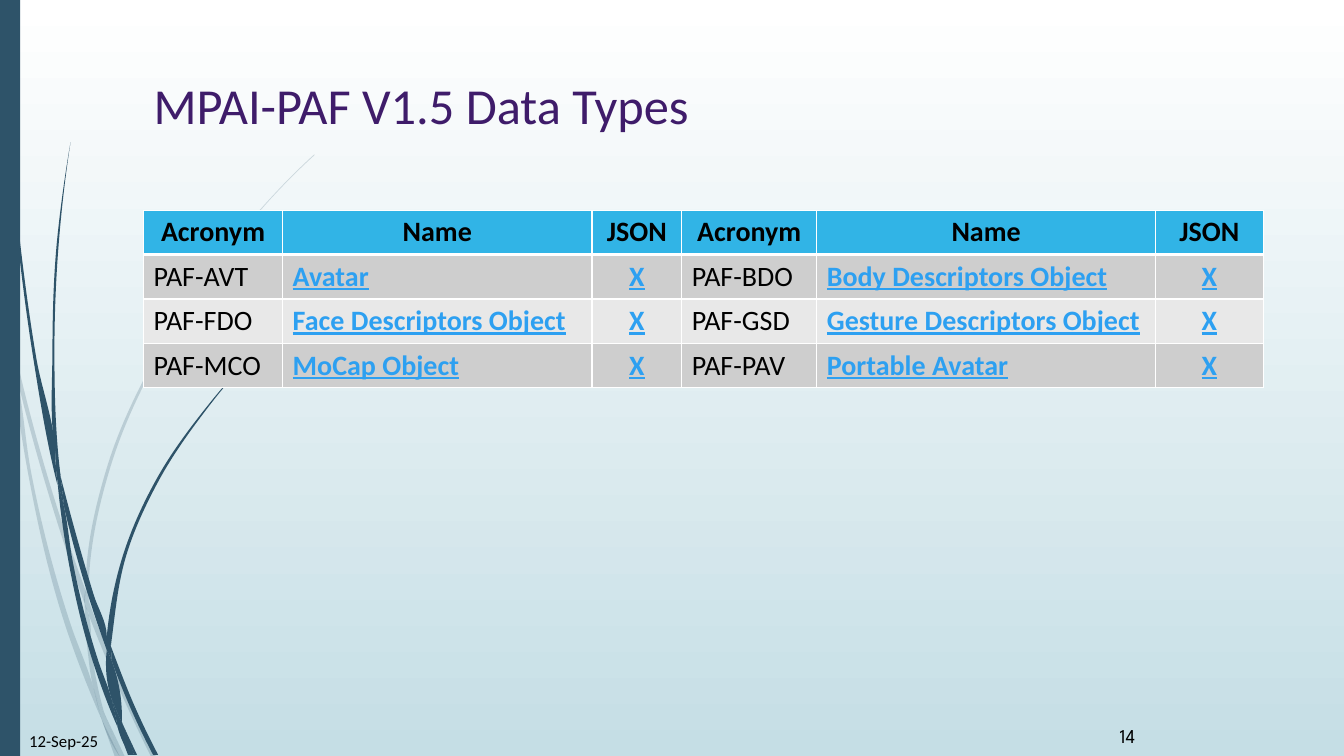
import math

import pptx
import pptx.dml.color
import pptx.enum.shapes
import pptx.enum.text
import pptx.oxml
import pptx.oxml.ns
import pptx.util

Pt = pptx.util.Pt
ALIGN = pptx.enum.text.PP_ALIGN
ANCHOR = pptx.enum.text.MSO_ANCHOR
NAMESPACE = pptx.oxml.ns.nsdecls("a")

THEME = {
    "font": "Calibri", "number font": "League Spartan",
    "title size": 36, "table size": 20, "date size": 12, "number size": 14,
    "title": "3F1C6A", "text": "000000", "link": "2DA0F1",
    "stem": "2E5369", "sky": "FFFFFF", "ground": "C5DEE5",
    "header": "31B4E6", "bands": ("CECECE", "E8E8E8"), "border": "FFFFFF",
}

TITLE = "MPAI-PAF V1.5 Data Types"
DATE = "12-Sep-25"
NUMBER = "14"
HEADER = ("Acronym", "Name", "JSON") * 2
DATA_TYPES = [
    ("PAF-AVT", "Avatar", "X", "PAF-BDO", "Body Descriptors Object", "X"),
    ("PAF-FDO", "Face Descriptors Object", "X", "PAF-GSD", "Gesture Descriptors Object", "X"),
    ("PAF-MCO", "MoCap Object", "X", "PAF-PAV", "Portable Avatar", "X"),
]
COLUMN_WIDTHS = (99.4, 221, 64.1, 96.5, 241.9, 77)
ROW_HEIGHT = 29.5

# Each blade of grass has two edges, one out and one back, on a grid of 0.72 points.
GRID = Pt(0.72)
PALE_BLADES = [
    ([(11, 350), (9, 322), (0, 282)], [(0, 299), (10, 344), (11, 350)]),
    ([(17, 376), (58, 522), (84, 599)], [(85, 586), (62, 520), (14, 345)]),
    ([(88, 610), (123, 694), (150, 751)], [(155, 751), (127, 692), (92, 607), (88, 596)]),
    ([(105, 711), (119, 751)], [(124, 751), (105, 711)]),
    ([(11, 350), (28, 470), (65, 621), (92, 693), (101, 714)],
     [(99, 707), (93, 683), (70, 619), (31, 469), (17, 376), (11, 350)]),
    ([(84, 599), (87, 646), (93, 683), (96, 692), (105, 711)],
     [(103, 706), (91, 646), (88, 610), (84, 599)]),
    ([(88, 596), (88, 584), (110, 462), (160, 349), (229, 245), (268, 198), (290, 175), (312, 154)],
     [(312, 153), (289, 175), (268, 197), (228, 244), (158, 348), (107, 461), (85, 584), (85, 586)]),
    ([(101, 714), (114, 751)], [(119, 751), (101, 714)]),
    ([(88, 608), (88, 610), (88, 596)], [(85, 586), (84, 599), (88, 608)]),
    ([(93, 683), (99, 707), (101, 714), (119, 751)], [(105, 711), (96, 692), (93, 683)]),
]
DARK_BLADES = [
    ([(3, 0), (4, 48), (7, 110), (17, 233), (33, 355), (56, 477), (57, 481)],
     [(55, 457), (55, 453), (36, 355), (19, 232), (8, 109), (5, 48), (4, 0)]),
    ([(64, 505), (88, 592), (106, 645)], [(106, 633), (106, 631), (93, 590), (60, 472)]),
    ([(111, 656), (132, 708), (152, 749)], [(157, 749), (136, 706), (113, 649), (110, 641)]),
    ([(57, 477), (68, 557), (93, 659), (111, 708), (117, 722)],
     [(116, 717), (110, 691), (98, 657), (72, 556), (64, 505), (57, 477)]),
    ([(60, 472), (58, 453), (54, 349), (58, 245), (63, 193), (70, 141)],
     [(70, 141), (62, 193), (56, 245), (52, 349), (55, 449), (60, 472)]),
    ([(122, 719), (133, 749)], [(136, 749), (122, 719)]),
    ([(57, 477), (64, 505)], [(60, 472), (55, 449), (55, 453), (57, 477)]),
    ([(110, 641), (111, 633), (125, 552), (158, 476), (205, 406), (231, 374), (245, 359), (261, 344)],
     [(260, 344), (245, 358), (231, 373), (204, 405), (156, 474), (122, 551), (106, 631)]),
    ([(117, 722), (127, 749)], [(131, 749), (117, 722)]),
    ([(106, 645), (110, 691), (116, 706), (122, 719)], [(121, 716), (111, 656), (109, 651), (106, 645)]),
    ([(106, 645), (109, 651), (111, 656)], [(110, 641), (106, 631), (106, 633), (106, 645)]),
    ([(110, 691), (116, 717), (117, 722), (130, 749)], [(133, 749), (122, 719), (116, 706), (110, 691)]),
]


def rgb(name):
    return pptx.dml.color.RGBColor.from_string(THEME.get(name, name))


def curve_edge(points):
    """Return (control, control, end) for each step of a smooth curve through the points."""
    points = [complex(*point) for point in points]
    steps = [b - a for a, b in zip(points, points[1:])]
    units = [step / abs(step) for step in steps]
    inner = [(u * abs(t) + v * abs(s)) / (abs(s) + abs(t))
             for u, v, s, t in zip(units, units[1:], steps, steps[1:])]
    first = 2 * units[0] - inner[0] if inner else units[0]
    last = 2 * units[-1] - inner[-1] if inner else units[-1]
    tangents = [first, *inner, last]
    return [(a + m * abs(step) / 3, b - n * abs(step) / 3, b)
            for a, b, m, n, step in zip(points, points[1:], tangents, tangents[1:], steps)]


def fill_shape(shape, color, opacity=100):
    shape.shadow.inherit = False
    shape.line.fill.background()
    shape.fill.solid()
    shape.fill.fore_color.rgb = rgb(color)
    if opacity < 100:
        color_element = shape.fill._xPr.find(".//" + pptx.oxml.ns.qn("a:srgbClr"))
        color_element.append(pptx.oxml.parse_xml(f'<a:alpha {NAMESPACE} val="{opacity * 1000}"/>'))


def add_blade(slide, edges, opacity):
    """Draw the blade with straight sides, then bend each side into a curve."""
    out, back = edges
    sides = curve_edge(out)
    if out[-1] != back[0]:
        sides += curve_edge([out[-1], back[0]])
    sides += curve_edge(back)
    builder = slide.shapes.build_freeform(*(value * GRID for value in out[0]))
    builder.add_line_segments([(end.real * GRID, end.imag * GRID) for _, _, end in sides], close=True)
    shape = builder.convert_to_shape()
    for line, side in zip(list(shape._element.iter(pptx.oxml.ns.qn("a:lnTo"))), sides):
        nodes = "".join(
            f'<a:pt x="{math.floor(point.real * GRID) - shape.left}" '
            f'y="{math.floor(point.imag * GRID) - shape.top}"/>' for point in side)
        curve = pptx.oxml.parse_xml(f"<a:cubicBezTo {NAMESPACE}>{nodes}</a:cubicBezTo>")
        line.getparent().replace(line, curve)
    fill_shape(shape, "stem", opacity)


def write(text_frame, text, size, color="text", font="font", align=ALIGN.LEFT):
    text_frame.word_wrap = True
    paragraph = text_frame.paragraphs[0]
    paragraph.text = text
    paragraph.alignment = align
    paragraph.font.name = THEME[font]
    paragraph.font.size = Pt(THEME[size])
    paragraph.font.color.rgb = rgb(color)
    return paragraph


def set_borders(cell, bottom_width):
    properties = cell._tc.get_or_add_tcPr()
    widths = {"lnL": 1, "lnR": 1, "lnT": 1, "lnB": bottom_width}
    for position, (side, width) in enumerate(widths.items()):
        properties.insert(position, pptx.oxml.parse_xml(
            f'<a:{side} {NAMESPACE} w="{Pt(width)}"><a:solidFill>'
            f'<a:srgbClr val="{THEME["border"]}"/></a:solidFill></a:{side}>'))


def add_data_table(slide):
    rows = [HEADER, *DATA_TYPES]
    table = slide.shapes.add_table(
        len(rows), len(HEADER), Pt(102.5), Pt(150.1), Pt(sum(COLUMN_WIDTHS)), Pt(ROW_HEIGHT * len(rows))).table
    for column, width in zip(table.columns, COLUMN_WIDTHS):
        column.width = Pt(width)
    for row_index, row in enumerate(rows):
        table.rows[row_index].height = Pt(ROW_HEIGHT)
        is_header = row_index == 0
        for column_index, text in enumerate(row):
            kind = HEADER[column_index]
            is_link = not is_header and kind != "Acronym"
            cell = table.cell(row_index, column_index)
            cell.vertical_anchor = ANCHOR.MIDDLE
            cell.fill.solid()
            cell.fill.fore_color.rgb = rgb("header" if is_header else THEME["bands"][(row_index - 1) % 2])
            set_borders(cell, 3 if is_header else 1)
            paragraph = write(cell.text_frame, text, "table size", "link" if is_link else "text",
                              align=ALIGN.CENTER if is_header or kind == "JSON" else ALIGN.LEFT)
            paragraph.font.bold = is_header or is_link
            paragraph.font.underline = is_link


def main():
    presentation = pptx.Presentation()
    presentation.slide_width, presentation.slide_height = Pt(960), Pt(540)
    slide = presentation.slides.add_slide(presentation.slide_layouts[5])
    background = slide.background.fill
    background.gradient()
    background.gradient_angle = 270
    for stop, color in zip(background.gradient_stops, ("sky", "ground")):
        stop.color.rgb = rgb(color)

    for blades, opacity in ((PALE_BLADES, 20), (DARK_BLADES, 100)):
        for edges in blades:
            add_blade(slide, edges, opacity)
    side_bar = slide.shapes.add_shape(
        pptx.enum.shapes.MSO_SHAPE.RECTANGLE, 0, 0, Pt(14.4), presentation.slide_height)
    fill_shape(side_bar, "stem")

    title = slide.shapes.title
    title.left, title.top, title.width, title.height = Pt(102.5), Pt(49), Pt(803.5), Pt(100.8)
    write(title.text_frame, TITLE, "title size", "title")
    title.text_frame.vertical_anchor = ANCHOR.TOP
    title.text_frame.auto_size = pptx.enum.text.MSO_AUTO_SIZE.NONE

    add_data_table(slide)
    date = slide.shapes.add_textbox(Pt(13.7), Pt(518.4), Pt(78.5), Pt(28.8))
    write(date.text_frame, DATE, "date size")
    number = slide.shapes.add_textbox(Pt(792.7), Pt(517), Pt(43.9), Pt(3.6))
    write(number.text_frame, NUMBER, "number size", font="number font")
    presentation.save("out.pptx")


if __name__ == "__main__":
    main()
